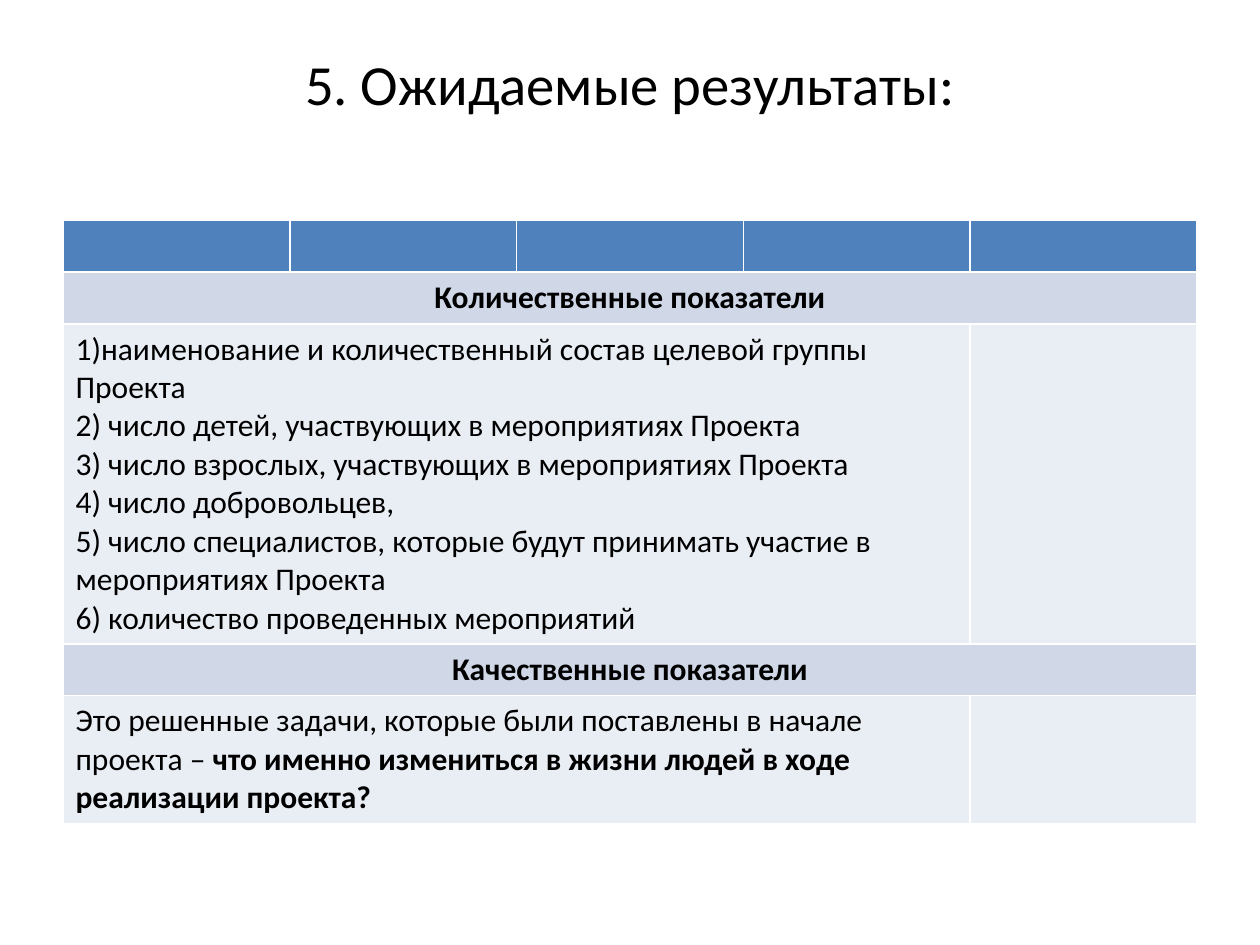
"""Build the expected results slide with its table of indicators."""
from pptx import Presentation
from pptx.dml.color import RGBColor
from pptx.enum.text import MSO_ANCHOR as Anchor, PP_ALIGN as Align
from pptx.util import Inches, Pt

COLORS = {"text": "000000", "header": "4F81BD", "section": "D0D8E8", "body": "E9EDF4"}
COLUMNS = 5
ROW_HEIGHT = Inches(0.41)


def write(paragraph, text, size, bold=False):
    run = paragraph.add_run()
    run.text = text
    for key, value in {"name": "Calibri", "size": Pt(size), "bold": bold}.items():
        setattr(run.font, key, value)
    run.font.color.rgb = RGBColor.from_string(COLORS["text"])


rows = [
    ("header", 1, []),
    ("section", COLUMNS, [[("Количественные показатели", True)]]),
    ("body", COLUMNS - 1, [
        [("1)наименование и количественный состав целевой группы Проекта", False)],
        [("2) число детей, участвующих в мероприятиях Проекта", False)],
        [("3) число взрослых, участвующих в мероприятиях Проекта", False)],
        [("4) число добровольцев,", False)],
        [("5) число специалистов, которые будут принимать участие в мероприятиях Проекта", False)],
        [("6) количество проведенных мероприятий", False)],
    ]),
    ("section", COLUMNS, [[("Качественные показатели", True)]]),
    ("body", COLUMNS - 1, [[
        ("Это решенные задачи, которые были поставлены в начале проекта – ", False),
        ("что именно измениться в жизни людей в ходе реализации проекта?", True),
    ]]),
]

deck = Presentation()
deck.slide_width, deck.slide_height = Inches(10), Inches(7.5)
margin = int(deck.slide_width * 0.05)
content_width = deck.slide_width - 2 * margin
slide = deck.slides.add_slide(deck.slide_layouts[5])

heading = slide.shapes.title
heading_place = {"left": margin, "top": int(deck.slide_height * 0.04),
                 "width": content_width, "height": Inches(1.25)}
for key, value in heading_place.items():
    setattr(heading, key, value)
heading.text_frame.vertical_anchor = Anchor.MIDDLE
heading_line = heading.text_frame.paragraphs[0]
heading_line.alignment = Align.CENTER
write(heading_line, "5. Ожидаемые результаты:", 32.4)
heading_line.add_line_break()
heading_line.font.size = Pt(32.4)

indicators = slide.shapes.add_table(
    len(rows), COLUMNS, margin, Inches(1.75), content_width, ROW_HEIGHT * len(rows)
).table

for row_index, (role, span, paragraphs) in enumerate(rows):
    indicators.rows[row_index].height = ROW_HEIGHT
    for column in range(COLUMNS):
        fill = indicators.cell(row_index, column).fill
        fill.solid()
        fill.fore_color.rgb = RGBColor.from_string(COLORS[role])
    entry = indicators.cell(row_index, 0)
    if span > 1:
        entry.merge(indicators.cell(row_index, span - 1))
    for index, parts in enumerate(paragraphs):
        frame = entry.text_frame
        line = frame.add_paragraph() if index else frame.paragraphs[0]
        line.alignment = Align.CENTER if role == "section" else Align.LEFT
        for text, bold in parts:
            write(line, text, 18, bold)

deck.save("out.pptx")
